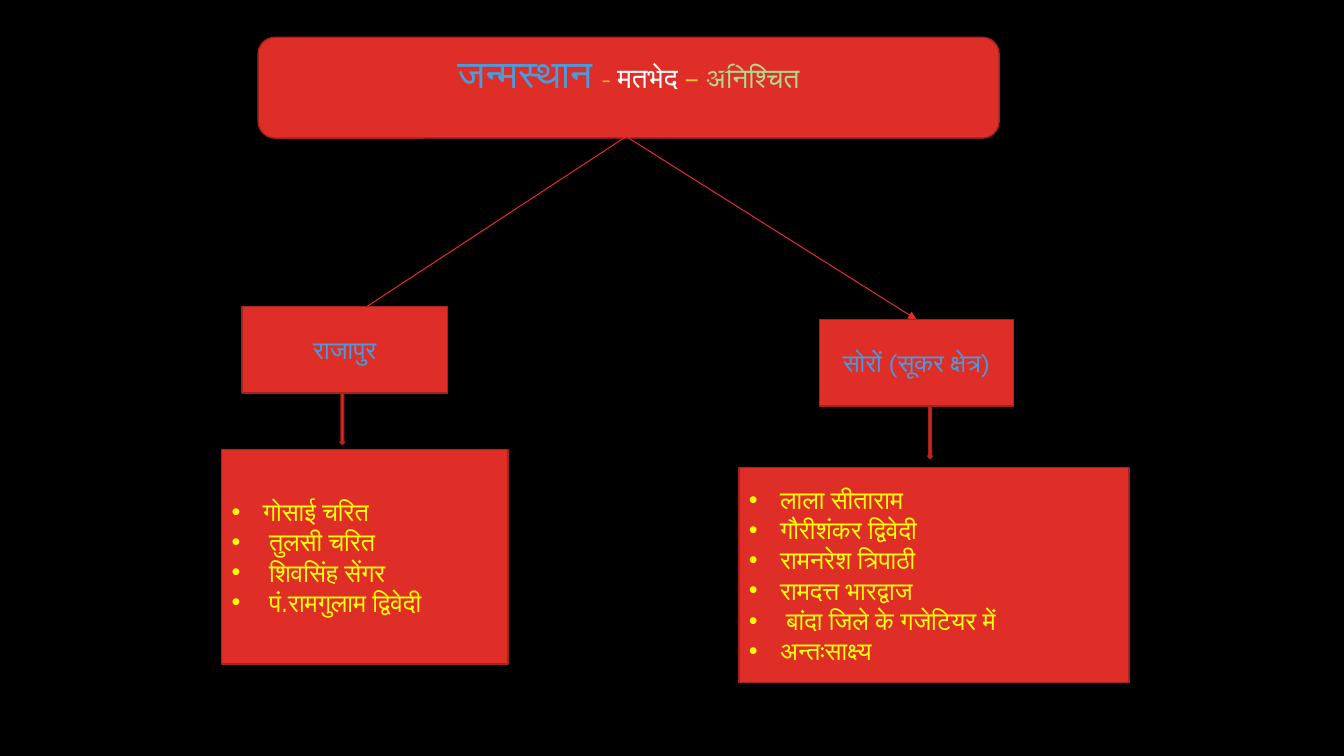
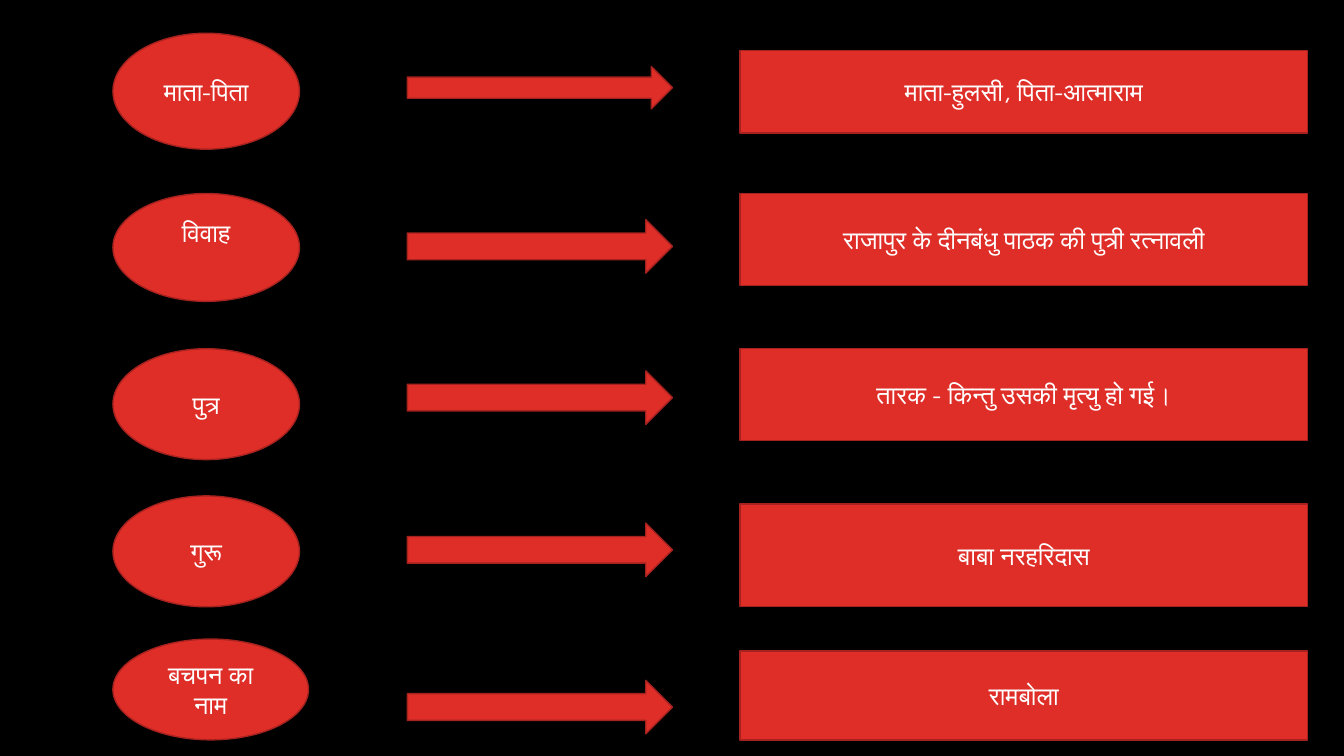
"""Build two slides on the birthplace and family of a poet."""
import pptx
import pptx.dml.color
import pptx.enum.shapes
import pptx.enum.text
import pptx.oxml
import pptx.oxml.ns
import pptx.util
from lxml import etree

Inches = pptx.util.Inches
Pt = pptx.util.Pt
KIND = pptx.enum.shapes.MSO_SHAPE
ALIGN = pptx.enum.text.PP_ALIGN

FONT = "TeX Gyre Adventor"
COLORS = {
    "back": "000000", "red": "DF2E28", "edge": "A5221E", "blue": "4A9BDC",
    "gold": "E9BF35", "white": "FFFFFF", "green": "B3D78D", "yellow": "FFFF00",
}

TITLE = [
    ("जन्मस्थान ", 28, "blue"), ("- ", 18, "gold"), ("मतभेद ", 20, "white"),
    ("– ", 20, "gold"), ("अनिश्चित", 20, "green"),
]
HEAD = (2.56, 0.37, 7.35, 1)
NEAR, FAR = 0.31, 0.37
PLACES = [
    {
        "name": "राजापुर", "box": (2.4, 3.04, 2.04, 0.86),
        "arrow": (3.37, 3.9), "list": (2.2, 4.46, 2.84, 2.13),
        "items": [("गोसाई चरित", NEAR), ("तुलसी चरित", FAR),
                  ("शिवसिंह सेंगर", FAR), ("पं.रामगुलाम द्विवेदी", FAR)],
    },
    {
        "name": "सोरों (सूकर क्षेत्र)", "box": (8.13, 3.17, 1.92, 0.86),
        "arrow": (9.2, 4.04), "list": (7.33, 4.64, 3.87, 2.13),
        "items": [("लाला सीताराम", NEAR), ("गौरीशंकर द्विवेदी", NEAR),
                  ("रामनरेश त्रिपाठी", NEAR), ("रामदत्त भारद्वाज", NEAR),
                  ("बांदा जिले के गजेटियर में", FAR), ("अन्तःसाक्ष्य", NEAR)],
    },
]

LEFT, MID, RIGHT = 1.12, 4.04, 7.34
FACTS = [
    {"key": "माता-पिता", "fact": "माता-हुलसी, पिता-आत्माराम",
     "oval": (0.33, 1.85, 1.15), "arrow": (0.66, 0.42), "box": (0.5, 0.82)},
    {"key": "विवाह", "fact": "राजापुर के दीनबंधु पाठक की पुत्री रत्नावली",
     "oval": (1.92, 1.85, 1.07), "arrow": (2.18, 0.53), "box": (1.92, 0.91),
     "foot": 0.35},
    {"key": "पुत्र", "fact": "तारक - किन्तु उसकी मृत्यु हो गई।",
     "oval": (3.46, 1.85, 1.1), "arrow": (3.68, 0.53), "box": (3.46, 0.91)},
    {"key": "गुरू", "fact": "बाबा नरहरिदास",
     "oval": (4.92, 1.85, 1.1), "arrow": (5.19, 0.53), "box": (5, 1.02)},
    {"key": "बचपन का नाम", "fact": "रामबोला",
     "oval": (6.34, 1.94, 1), "arrow": (6.75, 0.53), "box": (6.46, 0.88)},
]


def rgb(name):
    return pptx.dml.color.RGBColor.from_string(COLORS[name])


def add_page(deck):
    page = deck.slides.add_slide(deck.slide_layouts[6])
    page.background.fill.solid()
    page.background.fill.fore_color.rgb = rgb("back")
    return page


def add_box(page, kind, area):
    box = page.shapes.add_shape(kind, *map(Inches, area))
    box.shadow.inherit = False
    box.fill.solid()
    box.fill.fore_color.rgb = rgb("red")
    box.line.color.rgb = rgb("edge")
    box.line.width = Pt(1)
    return box


def add_bullet(para, indent):
    props = para._p.get_or_add_pPr()
    props.set("marL", str(Inches(indent)))
    props.set("indent", str(-Inches(indent)))
    for tag, key, value in (("a:buFont", "typeface", "Arial"),
                            ("a:buChar", "char", "•")):
        etree.SubElement(props, pptx.oxml.ns.qn(tag)).set(key, value)


def write(box, text, *, size=18, color="white", align=ALIGN.CENTER,
          indent=None, foot=0.05, more=False):
    """Put a string, or a list of (text, size, color) runs, in a shape."""
    frame = box.text_frame
    frame.word_wrap = True
    frame.vertical_anchor = pptx.enum.text.MSO_ANCHOR.MIDDLE
    frame.margin_bottom = Inches(foot)
    para = frame.add_paragraph() if more else frame.paragraphs[0]
    para.alignment = align
    if indent:
        add_bullet(para, indent)
    runs = [(text, size, color)] if isinstance(text, str) else text
    for words, points, tint in runs:
        run = para.add_run()
        run.text = words
        run.font.name = FONT
        run.font.size = Pt(points)
        run.font.color.rgb = rgb(tint)


def add_line(page, start, end):
    line = page.shapes.add_connector(
        pptx.enum.shapes.MSO_CONNECTOR.STRAIGHT, *map(Inches, start + end))
    line.line.color.rgb = rgb("red")
    line.line.width = Pt(0.75)
    tip = etree.SubElement(line.line._get_or_add_ln(),
                           pptx.oxml.ns.qn("a:tailEnd"))
    tip.set("type", "triangle")
    etree.SubElement(line._element.spPr, pptx.oxml.ns.qn("a:effectLst"))
    return line


def draw_places(page):
    head = add_box(page, KIND.ROUNDED_RECTANGLE, HEAD)
    write(head, TITLE, foot=0.35)
    add_line(page, (3.64, 3.04), (7.53, 0.49))
    link = add_line(page, (6.24, 1.37), (9.09, 3.17))
    for place in PLACES:
        box = add_box(page, KIND.RECTANGLE, place["box"])
        write(box, place["name"], color="blue")
        add_box(page, KIND.DOWN_ARROW, place["arrow"] + (0.05, 0.51))
        panel = add_box(page, KIND.RECTANGLE, place["list"])
        for row, (item, indent) in enumerate(place["items"]):
            write(panel, item, color="yellow", align=ALIGN.JUSTIFY,
                  indent=indent, more=row > 0)
    link.begin_connect(head, 2)
    link.end_connect(box, 0)


def draw_facts(page):
    for row in FACTS:
        top, width, height = row["oval"]
        oval = add_box(page, KIND.OVAL, (LEFT, top, width, height))
        write(oval, row["key"], foot=row.get("foot", 0.05))
        top, height = row["arrow"]
        add_box(page, KIND.RIGHT_ARROW, (MID, top, 2.63, height))
        top, height = row["box"]
        box = add_box(page, KIND.RECTANGLE, (RIGHT, top, 5.63, height))
        write(box, row["fact"])


def main():
    deck = pptx.Presentation()
    deck.slide_width = Inches(13.33)
    deck.slide_height = Inches(7.5)
    for draw in (draw_places, draw_facts):
        draw(add_page(deck))
    deck.save("out.pptx")


if __name__ == "__main__":
    main()
